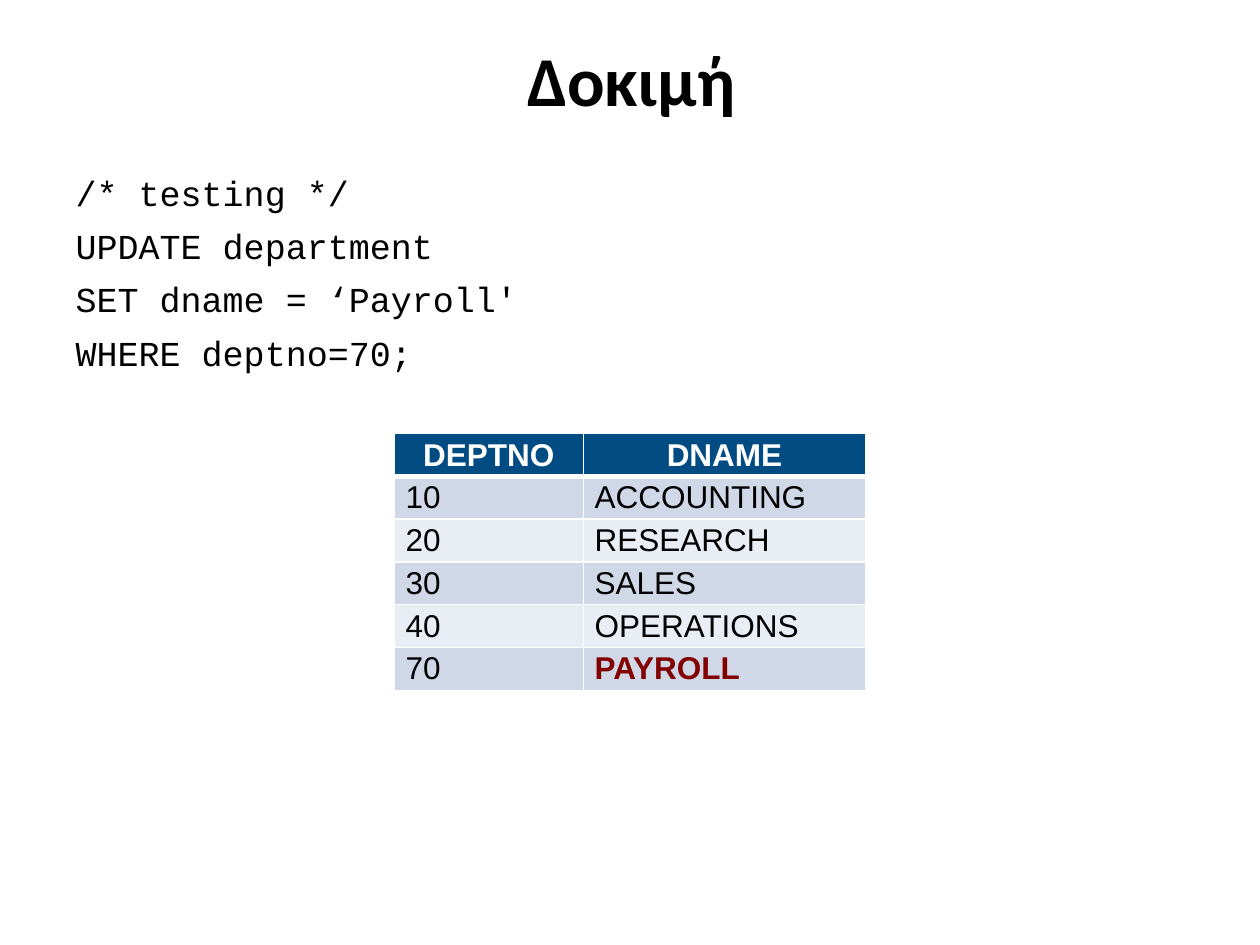
from lxml.etree import SubElement
from pptx import Presentation
from pptx.dml.color import RGBColor
from pptx.enum.text import MSO_ANCHOR as Anchor, PP_ALIGN as Align
from pptx.oxml.ns import qn
from pptx.util import Inches, Pt

# Content
HEADING = "Δοκιμή"
SQL_LINES = [
    "/* testing */",
    "UPDATE department",
    "SET dname = ‘Payroll'",
    "WHERE deptno=70;",
]
DEPARTMENTS = [
    ("DEPTNO", "DNAME"),
    ("10", "ACCOUNTING"),
    ("20", "RESEARCH"),
    ("30", "SALES"),
    ("40", "OPERATIONS"),
    ("70", "PAYROLL"),
]
UPDATED = "PAYROLL"
COLUMN_WIDTHS = (1.5, 2.24)
ROW_HEIGHT = 0.34
COLORS = {
    "text": "000000",
    "header": "004B82",
    "header_text": "FFFFFF",
    "odd_row": "D0D8E8",
    "even_row": "E9EDF4",
    "updated": "820000",
    "border": "FFFFFF",
}


def place(shape, left, top, width, height):
    shape.left, shape.top = Inches(left), Inches(top)
    shape.width, shape.height = Inches(width), Inches(height)


def format_runs(paragraph, font_name, size, color, bold=False):
    for run in paragraph.runs:
        run.font.name = font_name
        run.font.size = Pt(size)
        run.font.bold = bold
        run.font.color.rgb = RGBColor.from_string(COLORS[color])


def set_borders(cell, bottom_width):
    props = cell._tc.get_or_add_tcPr()
    widths = {"a:lnL": 1, "a:lnR": 1, "a:lnT": 1, "a:lnB": bottom_width}
    for position, (tag, width) in enumerate(widths.items()):
        line = SubElement(props, qn(tag), w=str(Pt(width)))
        fill = SubElement(line, qn("a:solidFill"))
        SubElement(fill, qn("a:srgbClr"), val=COLORS["border"])
        props.insert(position, line)  # borders come before the fill


prs = Presentation()
prs.slide_width, prs.slide_height = Inches(10), Inches(7.5)
slide = prs.slides.add_slide(prs.slide_layouts[1])

# Title
title = slide.shapes.title
place(title, 0.51, 0.13, 9, 0.99)
title.text_frame.text = HEADING
title.text_frame.vertical_anchor = Anchor.MIDDLE
heading = title.text_frame.paragraphs[0]
heading.alignment = Align.CENTER
format_runs(heading, "Calibri", 40, "text", bold=True)

# SQL statement
statement = slide.placeholders[1]
place(statement, 0.5, 1.31, 9, 5.51)
statement.text_frame.text = "\n".join(SQL_LINES)
for paragraph in statement.text_frame.paragraphs:
    paragraph.space_before = Pt(6.4)
    format_runs(paragraph, "Courier New", 20, "text")
    props = paragraph._p.get_or_add_pPr()
    props.set("marL", str(Inches(0.38)))
    props.set("indent", str(Inches(-0.38)))
    SubElement(props, qn("a:buNone"))

# Department table
departments = slide.shapes.add_table(
    len(DEPARTMENTS), len(COLUMN_WIDTHS), Inches(3.13), Inches(3.44),
    Inches(sum(COLUMN_WIDTHS)), Inches(ROW_HEIGHT * len(DEPARTMENTS))).table
for column, width in zip(departments.columns, COLUMN_WIDTHS):
    column.width = Inches(width)

for r, record in enumerate(DEPARTMENTS):
    departments.rows[r].height = Inches(ROW_HEIGHT)
    is_header = r == 0
    row_fill = "header" if is_header else "odd_row" if r % 2 else "even_row"
    for c, value in enumerate(record):
        cell = departments.cell(r, c)
        cell.text_frame.text = value
        cell.margin_left = cell.margin_right = Inches(0.09)
        cell.margin_top = cell.margin_bottom = Pt(2)
        cell.vertical_anchor = Anchor.BOTTOM if is_header else Anchor.MIDDLE
        cell.fill.solid()
        cell.fill.fore_color.rgb = RGBColor.from_string(COLORS[row_fill])
        set_borders(cell, 3 if is_header else 1)

        entry = cell.text_frame.paragraphs[0]
        entry.alignment = Align.CENTER if is_header else Align.LEFT
        is_updated = value == UPDATED
        color = "header_text" if is_header else "updated" if is_updated else "text"
        format_runs(entry, "Arial", 18, color, bold=is_header or is_updated)

prs.save("out.pptx")
